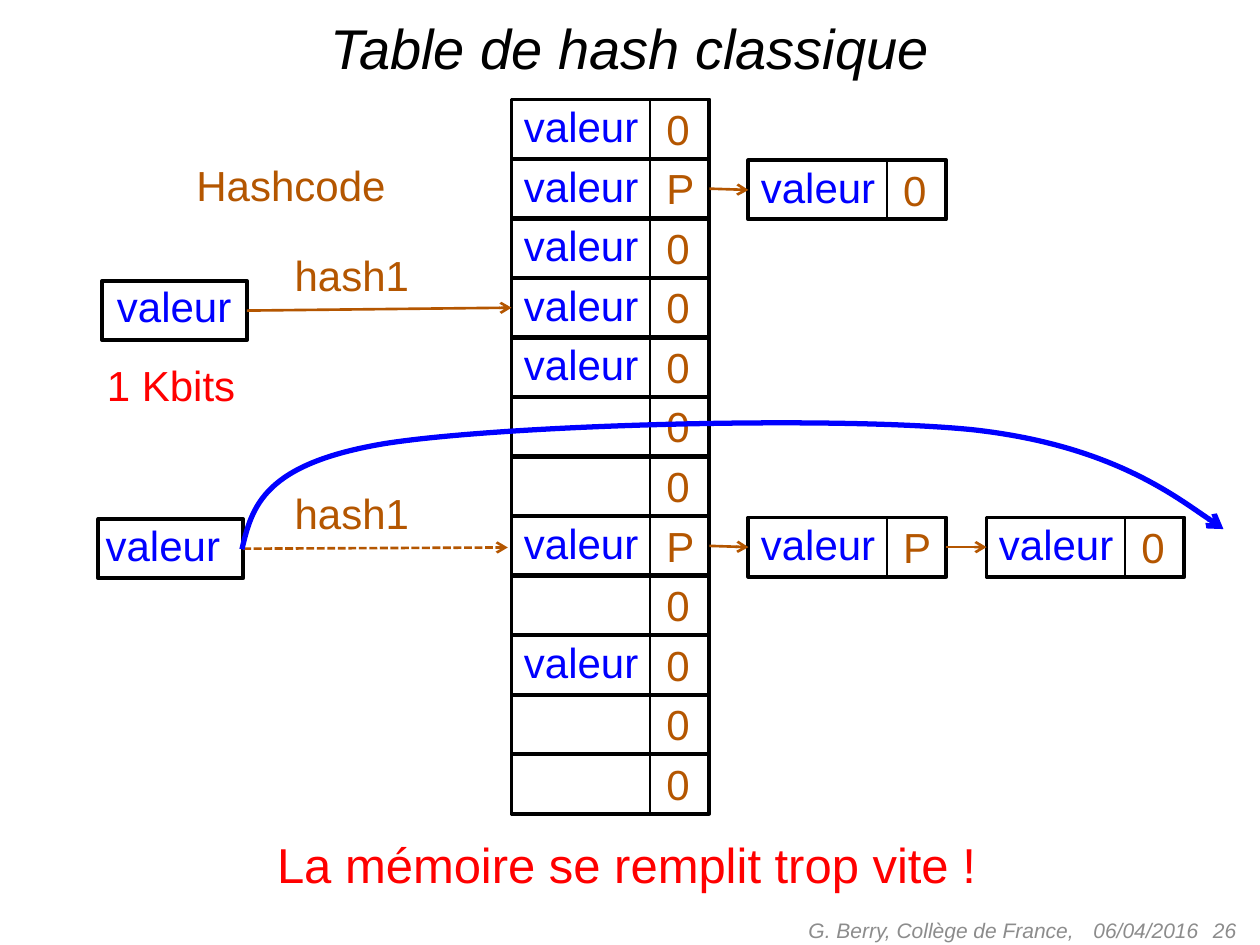
import pptx
import pptx.dml.color
import pptx.enum.dml
import pptx.enum.shapes
import pptx.enum.text
import pptx.oxml
import pptx.oxml.ns
import pptx.util
from dataclasses import dataclass
from pptx.util import Inches

RGB = pptx.dml.color.RGBColor.from_string
ALIGN = pptx.enum.text.PP_ALIGN
ANCHOR = pptx.enum.text.MSO_ANCHOR
SHAPE = pptx.enum.shapes.MSO_SHAPE
STRAIGHT = pptx.enum.shapes.MSO_CONNECTOR.STRAIGHT
QN = pptx.oxml.ns.qn


@dataclass(frozen=True)
class Theme:
    font: str = "Arial"
    ink: str = "000000"
    value: str = "0000FF"
    pointer: str = "B45600"
    alert: str = "FF0000"
    footer: str = "8C8C8C"
    title_size: int = 32
    message_size: int = 28
    body_size: int = 24
    footer_size: int = 12


T = Theme()


def add_text(shapes, text, x, y, w, color, h=0.51, size=T.body_size, frame=None):
    """Add a label; frame=alignment makes it a wrapped italic title or footer box."""
    sp = shapes.add_textbox(Inches(x), Inches(y), Inches(w), Inches(h))
    tf = sp.text_frame
    tf.text = text
    p = tf.paragraphs[0]
    if frame is None:
        tf.word_wrap = False
        tf.auto_size = pptx.enum.text.MSO_AUTO_SIZE.SHAPE_TO_FIT_TEXT
        tf.margin_top, tf.margin_bottom = Inches(0.02), Inches(0.07)
        p.line_spacing = 1.05
    else:
        tf.word_wrap = True
        tf.vertical_anchor = ANCHOR.MIDDLE
        p.alignment = frame
    font = p.runs[0].font
    font.name, font.size, font.italic = T.font, pptx.util.Pt(size), frame is not None
    font.color.rgb = RGB(color)


def style_outline(sp, color, width, arrow=False):
    """Give a shape or connector a plain line without shadow, optionally with an arrowhead."""
    sp.line.color.rgb = RGB(color)
    sp.line.width = pptx.util.Pt(width)
    if arrow:
        tail = pptx.oxml.parse_xml(f'<a:tailEnd {pptx.oxml.ns.nsdecls("a")} type="arrow"/>')
        sp.line._get_or_add_ln().append(tail)
    if hasattr(sp, "fill"):
        sp.fill.background()
        sp.shadow.inherit = False
    else:
        sp._element.spPr.append(pptx.oxml.parse_xml(f'<a:effectLst {pptx.oxml.ns.nsdecls("a")}/>'))


prs = pptx.Presentation()
prs.slide_width, prs.slide_height = Inches(10), Inches(7.5)
s = prs.slides.add_slide(prs.slide_layouts[6])
shapes = s.shapes

add_text(shapes, "Table de hash classique", 0.25, 0.05, 9.5, T.ink, 0.64, T.title_size, ALIGN.CENTER)
for text, x, w, align in [
    ("06/04/2016", 8.58, 2.33, ALIGN.LEFT),
    ("26", 7.58, 2.33, ALIGN.RIGHT),
    ("G. Berry, Collège de France, ", 5.5, 3.17, ALIGN.RIGHT),
]:
    add_text(shapes, text, x, 7.18, w, T.footer, 0.4, T.footer_size, align)

# Hash table: one cell per row, then the chained cells to its right
TABLE_X, TABLE_TOP, TABLE_BOTTOM = 4.06, 0.79, 6.46
CELL_W, CELL_H, DIVIDER = 1.57, 0.47, 1.1
POINTERS = "0P00000P0000"
FILLED_ROWS = {0, 1, 2, 3, 4, 7, 9}
PITCH = (TABLE_BOTTOM - TABLE_TOP) / len(POINTERS)

cells = [(TABLE_X, TABLE_TOP + i * PITCH, pointer, i in FILLED_ROWS)
         for i, pointer in enumerate(POINTERS)]
chained = [(5.94, 1, "0"), (5.94, 7, "P"), (7.83, 7, "0")]
cells += [(x, TABLE_TOP + row * PITCH + 0.01, pointer, True) for x, row, pointer in chained]

boxes = []
for x, y, pointer, filled in cells:
    box = shapes.add_shape(SHAPE.RECTANGLE, Inches(x), Inches(y), Inches(CELL_W), Inches(CELL_H))
    style_outline(box, T.ink, 2.25)
    boxes.append(box)
    if filled:
        add_text(shapes, "valeur", x, y - 0.03, 1.13, T.value)
    add_text(shapes, pointer, x + 1.13, y - 0.01, 0.43 if pointer == "P" else 0.39, T.pointer)

dividers = [(TABLE_X, TABLE_TOP, TABLE_BOTTOM)]
dividers += [(x, y, y + CELL_H) for x, y, *_ in cells[len(POINTERS):]]
for x, top, bottom in dividers:
    x += DIVIDER
    line = shapes.add_connector(STRAIGHT, Inches(x), Inches(top), Inches(x), Inches(bottom))
    style_outline(line, T.ink, 1.5)

upper_node, lower_node, last_node = boxes[len(POINTERS):]
for start, end in [(boxes[1], upper_node), (boxes[7], lower_node), (lower_node, last_node)]:
    link = shapes.add_connector(STRAIGHT, 0, 0, 0, 0)
    link.begin_connect(start, 3)
    link.end_connect(end, 1)
    style_outline(link, T.pointer, 1.5, arrow=True)

# Values being looked up
for box_x, box_y, text_x, text_y, hash_y, target in [
    (0.81, 2.23, 0.83, 2.19, 1.94, boxes[3]),
    (0.78, 4.12, 0.74, 4.08, 3.83, None),
]:
    group = shapes.add_group_shape().shapes
    add_text(group, "valeur", text_x, text_y, 1.13, T.value)
    box = group.add_shape(SHAPE.RECTANGLE, Inches(box_x), Inches(box_y), Inches(1.15), Inches(CELL_H))
    style_outline(box, T.ink, 2.25)
    mid_y = box_y + CELL_H / 2
    link = group.add_connector(STRAIGHT, Inches(box_x + 1.15), Inches(mid_y),
                               Inches(4.03), Inches(mid_y - 0.01))
    link.begin_connect(box, 3)
    style_outline(link, T.pointer, 1.5, arrow=True)
    if target is not None:
        link.end_connect(target, 1)
        add_text(group, "1 Kbits", 0.75, 2.81, 1.23, T.alert)
    else:
        link.line.dash_style = pptx.enum.dml.MSO_LINE.SQUARE_DOT
    add_text(group, "hash1", 2.24, hash_y, 1.12, T.pointer)

add_text(shapes, "Hashcode", 1.46, 1.23, 1.72, T.pointer)
add_text(shapes, "La mémoire se remplit trop vite !", 2.1, 6.58, 5.81, T.alert, 0.58, T.message_size)

# Curved arrow: the builder's points become cubic Bézier segments, three at a time
curve_points = [(2, 4.02), (2.09, 3.68), (3.06, 3.52),
                (4.02, 3.37), (6.6, 3.3), (7.71, 3.41),
                (8.82, 3.53), (9.71, 4.2), (9.71, 4.2)]
builder = shapes.build_freeform(Inches(1.92), Inches(4.36))
builder.add_line_segments([(Inches(x), Inches(y)) for x, y in curve_points], close=False)
curve = builder.convert_to_shape()
segments = list(curve._element.iter(QN("a:lnTo")))
for i in range(0, len(segments), 3):
    first, *others = segments[i:i + 3]
    first.tag = QN("a:cubicBezTo")
    for segment in others:
        first.append(segment[0])
        segment.getparent().remove(segment)
style_outline(curve, T.value, 3, arrow=True)

prs.save("out.pptx")
